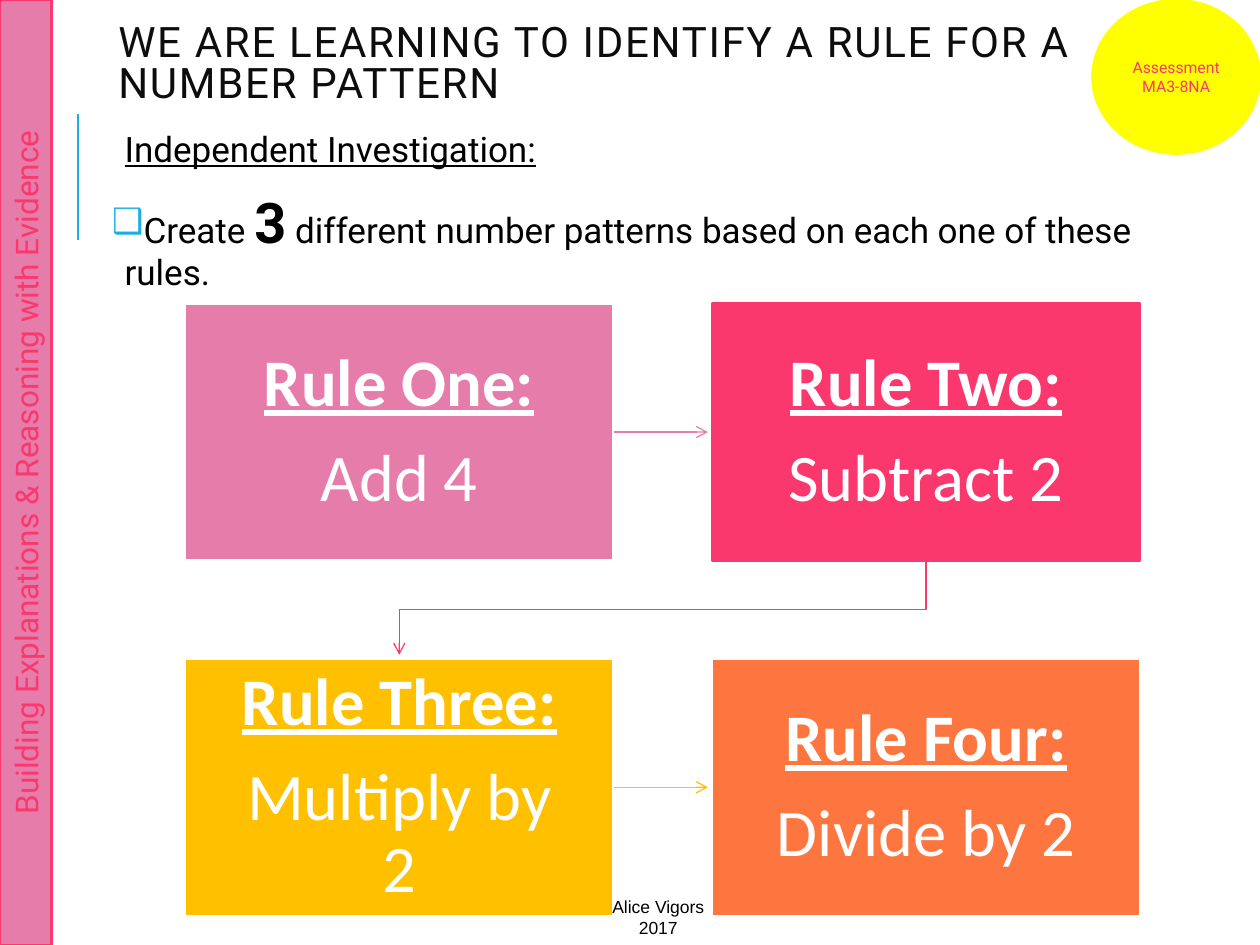
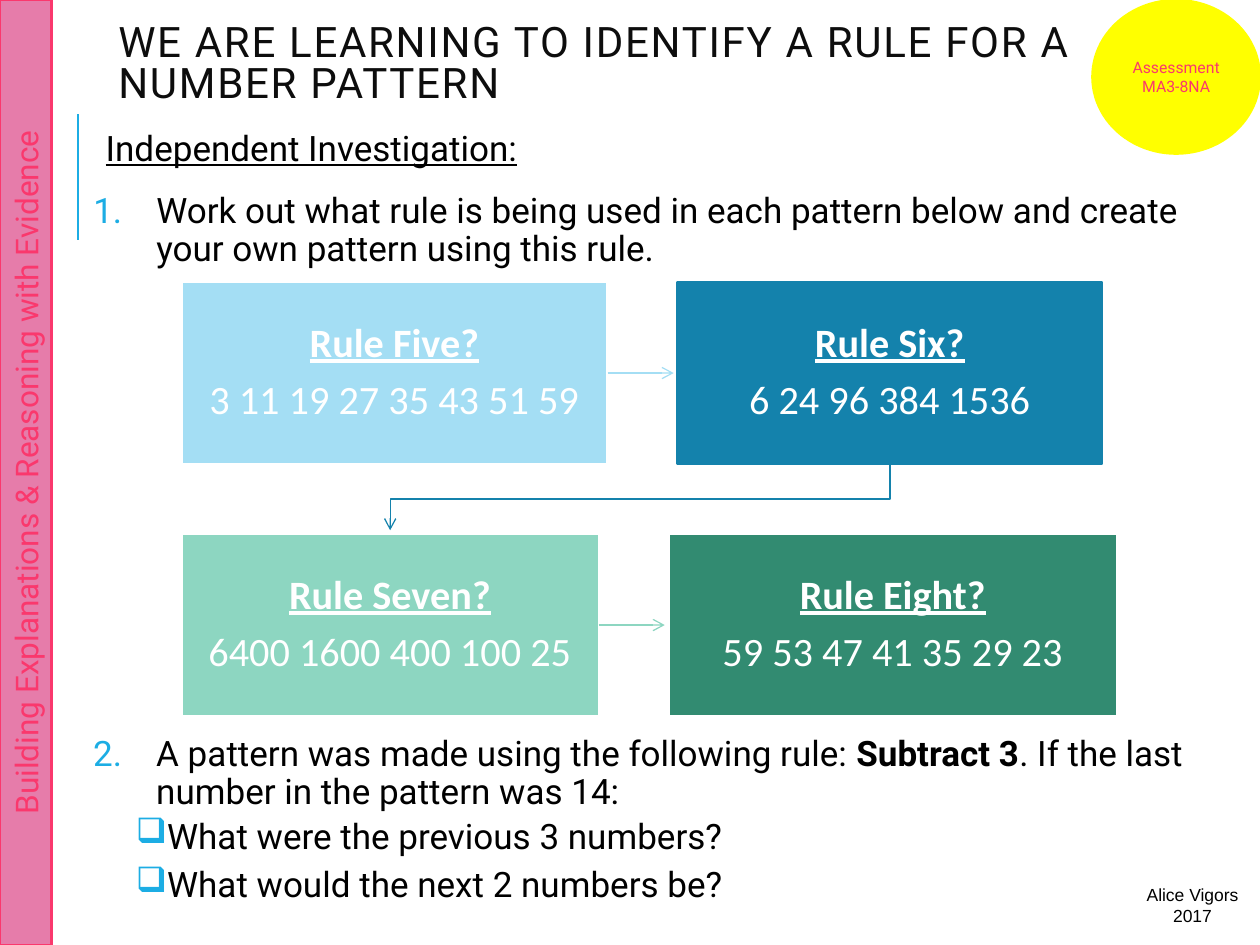
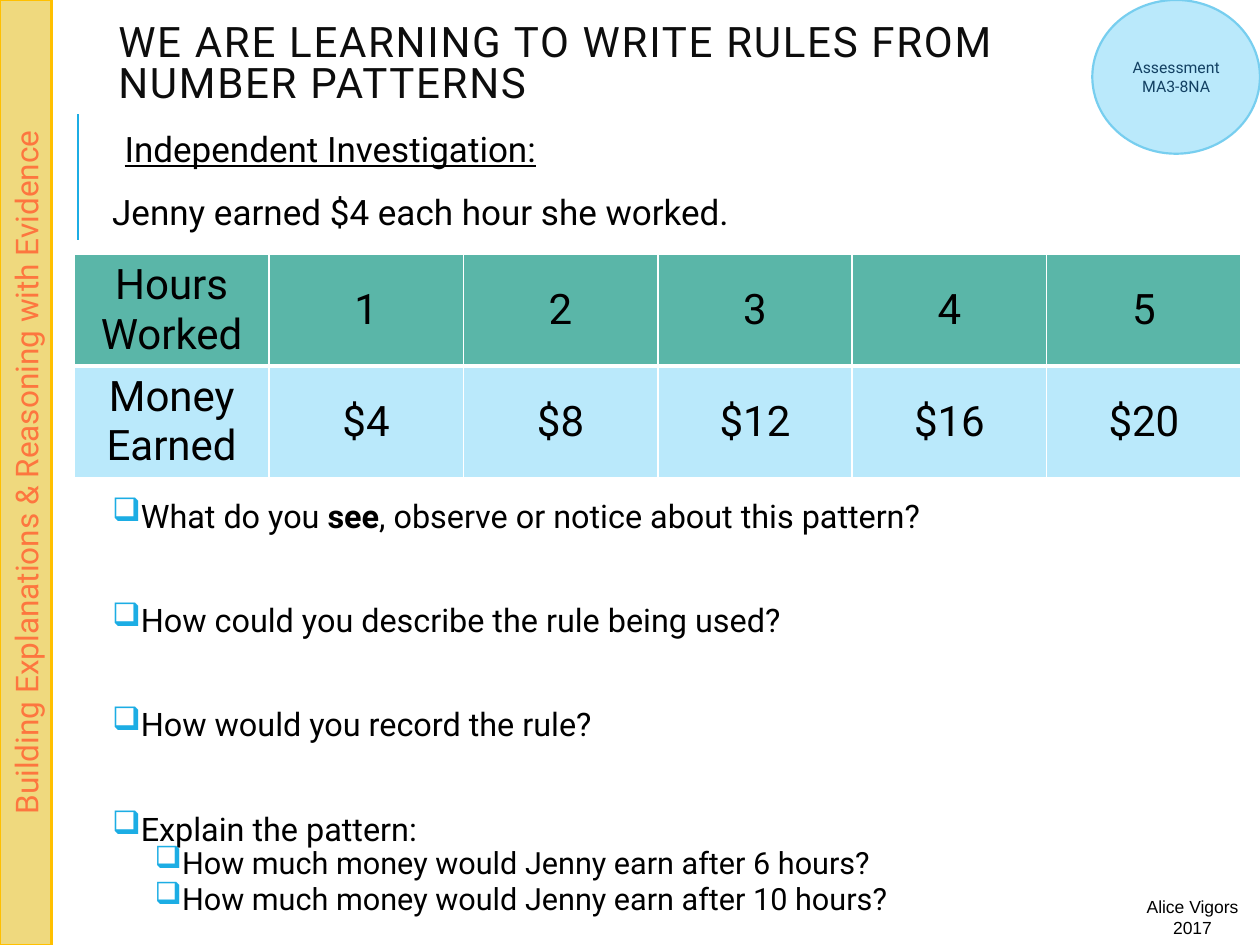
"""Build three maths lesson slides about rules for number patterns."""
from itertools import count

from lxml.etree import SubElement
from pptx import Presentation
from pptx.dml.color import RGBColor
from pptx.enum.shapes import MSO_CONNECTOR, MSO_SHAPE
from pptx.enum.text import MSO_ANCHOR, MSO_AUTO_SIZE, PP_ALIGN
from pptx.oxml.ns import qn
from pptx.util import Cm, Pt

COLORS = {
    "white": "FFFFFF", "black": "000000", "title": "0D0D0D", "accent": "1CADE4",
    "pink": "E67CAA", "rose": "FA386D", "gold": "FFC000", "orange": "FD763F",
    "sand": "EFD97E", "yellow": "FFFF00", "ice": "BAE9FB", "sky": "77CEEF",
    "navy": "134163", "pale blue": "A4DEF4", "blue": "1482AC",
    "mint": "8DD6C1", "green": "328B71", "teal": "5AB6A8",
}
FONT = "Roboto"
SLIDE_WIDTH, SLIDE_HEIGHT = 25.4, 19.05
BAND = "Building Explanations & Reasoning with Evidence"
BADGE = "Assessment\nMA3-8NA"
CREDIT = "Alice Vigors 2017"
HEADING = ("heading", "Independent Investigation:")
IDENTIFY = "WE ARE LEARNING TO IDENTIFY A RULE FOR A NUMBER PATTERN"
WRITE = "WE ARE LEARNING TO WRITE RULES FROM NUMBER PATTERNS"
ARROW_GAP = 0.08

THEMES = {
    "rose": {"band": ("pink", "rose", "rose"), "badge": ("yellow", "yellow", "rose")},
    "gold": {"band": ("sand", "gold", "orange"), "badge": ("ice", "sky", "navy")},
}

PARAGRAPH_KINDS = {
    "heading": {"margin": 0.25, "indent": 0, "before": 12, "after": 2},
    "plain": {"margin": 0, "indent": 0, "before": 12, "after": 2},
    "number": {"margin": 1.27, "indent": -1.27, "before": 12, "after": 2},
    "task": {"margin": 0.25, "indent": -0.25, "before": 12, "after": 2},
    "question": {"margin": 0.25, "indent": -0.25, "before": 42, "after": 2},
    "part": {"margin": 1.24, "indent": -0.38, "before": 2, "after": 4},
    "detail": {"margin": 1.24, "indent": -0.38, "before": 2, "after": 4, "scale": 0.95},
}
BOXED_KINDS = ("task", "question", "part", "detail")

SLIDES = [
    {
        "title": IDENTIFY, "title_width": 22.28, "theme": "rose", "credit": (11.91, 17.93),
        "lists": [{
            "frame": (2.13, 2.54, 22.28, 4.34), "size": 20, "spacing": 0.9, "bold_size": 32,
            "paragraphs": [
                HEADING,
                ("task", "Create **3** different number patterns based on each one of these rules."),
            ],
        }],
        "rules": {
            "left": 3.73, "top": 6.12, "height": 5.18, "row_step": 7.16, "gap": 1.98,
            "size": 38, "inset": 0.76, "widths": [(8.64, 8.64), (8.64, 8.64)],
            "cards": [
                ("Rule One:", "Add 4", "pink", "white"),
                ("Rule Two:", "Subtract 2", "rose", "rose"),
                ("Rule Three:", "Multiply by 2", "gold", "white"),
                ("Rule Four:", "Divide by 2", "orange", "white"),
            ],
        },
    },
    {
        "title": IDENTIFY, "title_width": 22.28, "theme": "rose", "credit": (22.68, 17.7),
        "lists": [
            {
                "frame": (1.75, 2.51, 22.28, 4.34), "size": 20, "spacing": 0.9,
                "paragraphs": [
                    HEADING,
                    ("number", "Work out what rule is being used in each pattern below "
                               "and create your own pattern using this rule."),
                ],
            },
            {
                "frame": (1.75, 14.71, 22.28, 4.34), "size": 20, "spacing": 0.9,
                "paragraphs": [
                    ("number", "A pattern was made using the following rule: **Subtract 3**. "
                               "If the last number in the pattern was 14:"),
                    ("part", "What were the previous 3 numbers?"),
                    ("part", "What would the next 2 numbers be?"),
                ],
            },
        ],
        "rules": {
            "left": 3.66, "top": 5.69, "height": 3.66, "row_step": 5.08, "gap": 1.41,
            "size": 23, "inset": 0.46, "widths": [(8.59, 8.56), (8.41, 9.04)],
            "cards": [
                ("Rule Five?", "3 11 19 27 35 43 51 59", "pale blue", "white"),
                ("Rule Six?", "6 24 96 384 1536", "blue", "blue"),
                ("Rule Seven?", "6400 1600 400 100 25", "mint", "white"),
                ("Rule Eight?", "59 53 47 41 35 29 23", "green", "white"),
            ],
        },
    },
    {
        "title": WRITE, "title_width": 19.89, "theme": "gold", "credit": (22.68, 17.93),
        "lists": [
            {
                "frame": (2.13, 2.54, 22.28, 2.59), "size": 20, "spacing": 0.9,
                "paragraphs": [HEADING, ("plain", "Jenny earned $4 each hour she worked.")],
            },
            {
                "frame": (2.13, 10.08, 22.28, 8.74), "size": 18.5, "spacing": 0.7,
                "paragraphs": [
                    ("task", "What do you **see**, observe or notice about this pattern?"),
                    ("question", "How could you describe the rule being used?"),
                    ("question", "How would you record the rule?"),
                    ("question", "Explain the pattern:"),
                    ("detail", "How much money would Jenny earn after 6 hours?"),
                    ("detail", "How much money would Jenny earn after 10 hours?"),
                ],
            },
        ],
        "earnings": [
            ("teal", ["Hours Worked", "1", "2", "3", "4", "5"]),
            ("ice", ["Money Earned", "$4", "$8", "$12", "$16", "$20"]),
        ],
    },
]


def rgb(color):
    return RGBColor.from_string(COLORS[color])


def cms(*lengths):
    return [Cm(length) for length in lengths]


def style(paragraph, size, color, font=FONT):
    for run in paragraph.runs:
        run.font.size = Pt(size)
        run.font.name = font
        run.font.color.rgb = rgb(color)


def set_insets(text_frame, inset):
    text_frame.margin_left = text_frame.margin_right = Cm(inset)
    text_frame.margin_top = text_frame.margin_bottom = Cm(inset)


def place(shape, frame):
    shape.left, shape.top, shape.width, shape.height = cms(*frame)


def add_panel(slide, preset, frame, fill, outline):
    panel = slide.shapes.add_shape(preset, *cms(*frame))
    panel.shadow.inherit = False
    panel.fill.solid()
    panel.fill.fore_color.rgb = rgb(fill)
    panel.line.color.rgb = rgb(outline)
    panel.line.width = Pt(1.25)
    panel.text_frame.vertical_anchor = MSO_ANCHOR.MIDDLE
    return panel


def add_label(panel, text, size, color):
    panel.text_frame.text = text
    for paragraph in panel.text_frame.paragraphs:
        paragraph.alignment = PP_ALIGN.CENTER
        style(paragraph, size, color)


def style_line(shape, color, width, arrow=False):
    shape.line.color.rgb = rgb(color)
    shape.line.width = Pt(width)
    if arrow:
        SubElement(shape.line._get_or_add_ln(), qn("a:tailEnd"), type="arrow")


def add_line(slide, start, end, color, width, arrow=False):
    line = slide.shapes.add_connector(MSO_CONNECTOR.STRAIGHT, *cms(*start, *end))
    style_line(line, color, width, arrow)
    SubElement(line._element.spPr, qn("a:effectLst"))
    return line


def set_bullet(paragraph, kind, numbering):
    properties = paragraph._p.get_or_add_pPr()
    properties.set("marL", str(Cm(PARAGRAPH_KINDS[kind]["margin"])))
    properties.set("indent", str(Cm(PARAGRAPH_KINDS[kind]["indent"])))
    if kind not in BOXED_KINDS + ("number",):
        SubElement(properties, qn("a:buNone"))
        return
    bullet_color = SubElement(properties, qn("a:buClr"))
    SubElement(bullet_color, qn("a:srgbClr"), val=COLORS["accent"])
    if kind == "number":
        SubElement(properties, qn("a:buAutoNum"), type="arabicPeriod", startAt=str(next(numbering)))
    else:
        SubElement(properties, qn("a:buChar"), char="❑")


def fill_list(text_frame, content, numbering):
    text_frame.word_wrap = True
    text_frame.auto_size = MSO_AUTO_SIZE.NONE
    set_insets(text_frame, 0.13)
    for position, (kind, text) in enumerate(content["paragraphs"]):
        paragraph = text_frame.add_paragraph() if position else text_frame.paragraphs[0]
        rule = PARAGRAPH_KINDS[kind]
        paragraph.level = 1 if kind in ("part", "detail") else 0
        paragraph.line_spacing = content["spacing"]
        paragraph.space_before = Pt(rule["before"])
        paragraph.space_after = Pt(rule["after"])
        set_bullet(paragraph, kind, numbering)
        for piece in text.split("**"):
            paragraph.add_run().text = piece
        style(paragraph, content["size"] * rule.get("scale", 1), "black")
        for strong in paragraph.runs[1::2]:
            strong.font.bold = True
            strong.font.size = Pt(content.get("bold_size", content["size"]))
        if kind == "heading":
            paragraph.runs[0].font.underline = True


def add_lists(slide, lists):
    numbering = count(1)
    for position, content in enumerate(lists):
        if position:
            holder = slide.shapes.add_textbox(*cms(*content["frame"]))
        else:
            holder = slide.placeholders[1]
            place(holder, content["frame"])
        fill_list(holder.text_frame, content, numbering)


def add_title(slide, text, width):
    title = slide.shapes.title
    place(title, (2.13, 0.81, width, 2.01))
    title.text_frame.text = text
    title.text_frame.auto_size = MSO_AUTO_SIZE.NONE
    title.text_frame.vertical_anchor = MSO_ANCHOR.MIDDLE
    title.text_frame.margin_bottom = Cm(1.1)
    paragraph = title.text_frame.paragraphs[0]
    paragraph.alignment = PP_ALIGN.LEFT
    paragraph.line_spacing = 0.8
    style(paragraph, 24, "title")
    paragraph.runs[0].font._element.set("spc", "100")


def add_frame(slide, theme, credit_corner):
    add_line(slide, (1.57, 4.83), (1.57, 2.29), "accent", 1.5)
    fill, outline, ink = theme["band"]
    band = add_panel(slide, MSO_SHAPE.RECTANGLE, (0, 0, 1.04, SLIDE_HEIGHT), fill, outline)
    band.text_frame._txBody.bodyPr.set("vert", "vert270")
    add_label(band, BAND, 18, ink)
    fill, outline, ink = theme["badge"]
    badge = add_panel(slide, MSO_SHAPE.OVAL, (22.02, 0, 3.38, 3.1), fill, outline)
    add_label(badge, BADGE, 9, ink)
    credit = slide.shapes.add_textbox(*cms(*credit_corner, 2.72, 1.12))
    credit.text_frame.word_wrap = True
    credit.text_frame.text = CREDIT
    credit.text_frame.paragraphs[0].alignment = PP_ALIGN.CENTER
    style(credit.text_frame.paragraphs[0], 10, "black", "Arial")


def add_card(slide, frame, card, size, inset):
    name, pattern, fill, outline = card
    panel = add_panel(slide, MSO_SHAPE.RECTANGLE, frame, fill, outline)
    set_insets(panel.text_frame, inset)
    panel.text_frame.text = f"{name}\n{pattern}"
    for paragraph in panel.text_frame.paragraphs:
        paragraph.alignment = PP_ALIGN.CENTER
        paragraph.line_spacing = 0.9
        paragraph.space_after = Pt(round(size * 0.35, 1))
        style(paragraph, size, "white", "Calibri")
    heading = panel.text_frame.paragraphs[0].runs[0].font
    heading.bold = heading.underline = True
    return panel


def add_row_turn(slide, upper, lower, color):
    start_x, end_x = upper.left + upper.width // 2, lower.left + lower.width // 2
    start_y, end_y = upper.top + upper.height, lower.top - Cm(ARROW_GAP)
    middle_y = (start_y + lower.top) // 2
    builder = slide.shapes.build_freeform(start_x, start_y)
    builder.add_line_segments([(start_x, middle_y), (end_x, middle_y), (end_x, end_y)], close=False)
    turn = builder.convert_to_shape()
    turn.shadow.inherit = False
    turn.fill.background()
    style_line(turn, color, 0.75, arrow=True)


def add_rules(slide, rules):
    panels = []
    for row, widths in enumerate(rules["widths"]):
        left, top = rules["left"], rules["top"] + row * rules["row_step"]
        for column, width in enumerate(widths):
            card = rules["cards"][2 * row + column]
            frame = (left, top, width, rules["height"])
            panels.append(add_card(slide, frame, card, rules["size"], rules["inset"]))
            left += width + rules["gap"]
        middle = top + rules["height"] / 2
        start = rules["left"] + widths[0]
        arrow = add_line(slide, (start, middle), (start + rules["gap"] - ARROW_GAP, middle),
                         rules["cards"][2 * row][2], 0.75, arrow=True)
        arrow.begin_connect(panels[2 * row], 3)
    add_row_turn(slide, panels[1], panels[2], rules["cards"][1][2])


def set_borders(cell, widths):
    properties = cell._tc.get_or_add_tcPr()
    for position, (side, width) in enumerate(widths.items()):
        border = SubElement(properties, qn(f"a:ln{side}"), w=str(Pt(width)))
        fill = SubElement(border, qn("a:solidFill"))
        SubElement(fill, qn("a:srgbClr"), val=COLORS["white"])
        properties.insert(position, border)


def add_earnings(slide, earnings):
    columns = len(earnings[0][1])
    table = slide.shapes.add_table(
        len(earnings), columns, *cms(1.5, 5.13, columns * 3.92, len(earnings) * 2.25)).table
    for row, (fill, values) in enumerate(earnings):
        for column, value in enumerate(values):
            cell = table.cell(row, column)
            cell.text_frame.text = value
            cell.vertical_anchor = MSO_ANCHOR.MIDDLE
            cell.fill.solid()
            cell.fill.fore_color.rgb = rgb(fill)
            paragraph = cell.text_frame.paragraphs[0]
            paragraph.alignment = PP_ALIGN.CENTER
            style(paragraph, 24, "black")
            paragraph.runs[0].font.bold = False
            set_borders(cell, {"L": 1, "R": 1, "T": 3 if row else 1, "B": 1 if row else 3})


def main():
    deck = Presentation()
    deck.slide_width, deck.slide_height = cms(SLIDE_WIDTH, SLIDE_HEIGHT)
    for content in SLIDES:
        slide = deck.slides.add_slide(deck.slide_layouts[1])
        add_title(slide, content["title"], content["title_width"])
        add_lists(slide, content["lists"])
        if "rules" in content:
            add_rules(slide, content["rules"])
        if "earnings" in content:
            add_earnings(slide, content["earnings"])
        add_frame(slide, THEMES[content["theme"]], content["credit"])
    deck.save("out.pptx")


if __name__ == "__main__":
    main()
